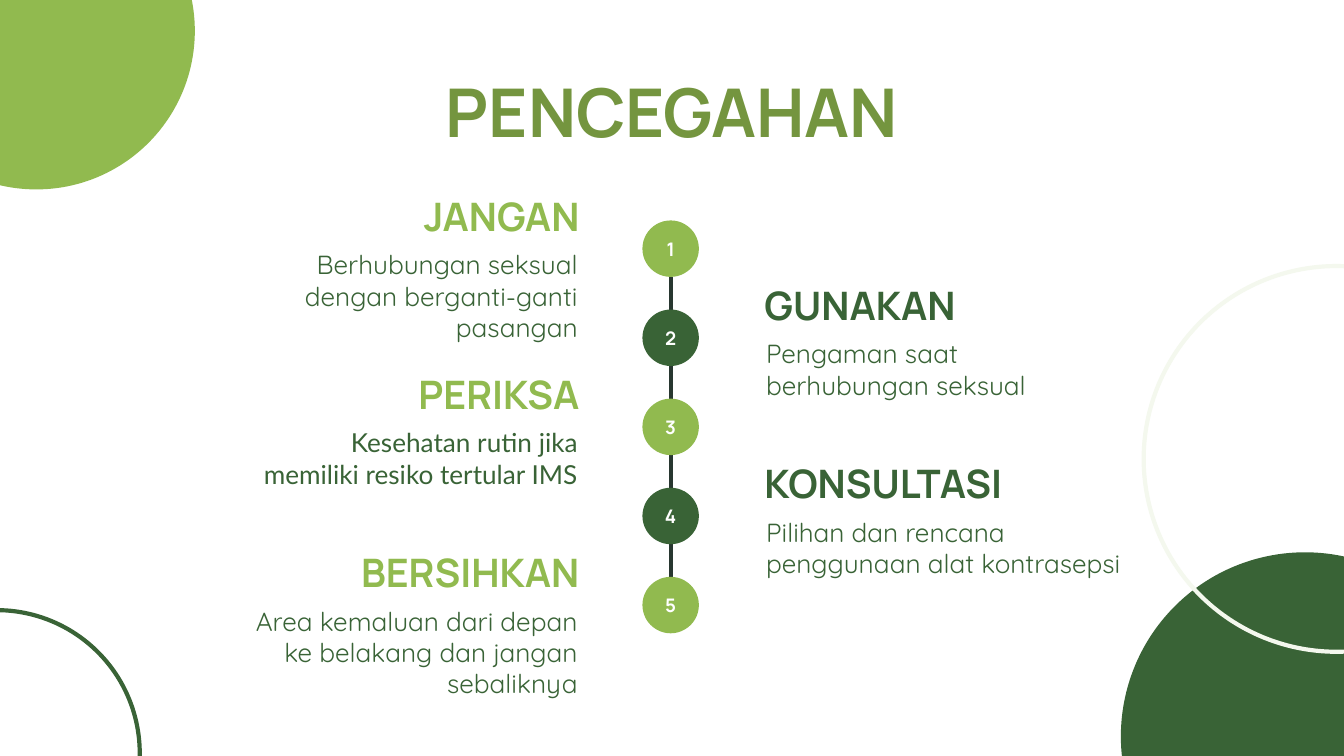
import pptx
import pptx.util
import pptx.oxml.ns
import pptx.dml.color
import pptx.enum.shapes
import pptx.enum.text
import lxml.etree

COLOURS = {"white": "FFFFFF", "lime": "91BA4F", "forest": "396336",
           "olive": "74953F", "mist": "F4F8EE", "ink": "283730"}
COLUMNS, ROWS = 100, 56.25
NODE_SIZE, NODE_LEFT, FIRST_NODE, NODE_STEP = 4.2, 47.8, 16.4, 6.63
AXIS = 49.9
LEFT_EDGE, RIGHT_EDGE = 43.8, 56.2
HEADING_WIDTH = 27.4

STEPS = [
    ("JANGAN", "Berhubungan seksual dengan berganti-ganti pasangan", 27.4, "Quicksand"),
    ("GUNAKAN", "Pengaman saat berhubungan seksual", 24.9, "Quicksand"),
    ("PERIKSA", "Kesehatan rutin jika memiliki resiko tertular IMS", 25.4, "Lato"),
    ("KONSULTASI", "Pilihan dan rencana penggunaan alat kontrasepsi", 28.1, "Quicksand"),
    ("BERSIHKAN", "Area kemaluan dari depan ke belakang dan jangan sebaliknya", 27.4, "Quicksand"),
]
CIRCLES = [
    (83.4, 41.1, 27.4, "forest", None),
    (-9.1, -9.5, 23.6, "lime", None),
    (-10.9, 45.4, 21.3, None, "forest"),
    (85.1, 19.8, 28.7, None, "mist"),
]


class Page:
    ALIGN = {"left": pptx.enum.text.PP_ALIGN.LEFT,
             "center": pptx.enum.text.PP_ALIGN.CENTER,
             "right": pptx.enum.text.PP_ALIGN.RIGHT}
    LINE_WIDTH = pptx.util.Pt(2.25)

    def __init__(self, deck):
        self.unit = deck.slide_width / COLUMNS
        self.slide = deck.slides.add_slide(deck.slide_layouts[5])
        background = self.slide.background.fill
        background.solid()
        background.fore_color.rgb = self.colour("white")

    def colour(self, name):
        return pptx.dml.color.RGBColor.from_string(COLOURS[name])

    def grid(self, *places):
        return [round(place * self.unit) for place in places]

    def set_text(self, shape, text, size, font, colour, align, bold=False,
                 inset=(0.1, 0.1), anchor=pptx.enum.text.MSO_ANCHOR.TOP):
        frame = shape.text_frame
        side, end = (pptx.util.Inches(value) for value in inset)
        layout = {"word_wrap": True, "vertical_anchor": anchor,
                  "auto_size": pptx.enum.text.MSO_AUTO_SIZE.NONE,
                  "margin_left": side, "margin_right": side,
                  "margin_top": end, "margin_bottom": end}
        for name, value in layout.items():
            setattr(frame, name, value)
        para = frame.paragraphs[0]
        para.alignment = self.ALIGN[align]
        span = para.add_run()
        span.text = text
        style = {"size": pptx.util.Pt(size), "name": font, "bold": bold}
        for name, value in style.items():
            setattr(span.font, name, value)
        span.font.color.rgb = self.colour(colour)

    def title(self, text, left, top, width, height):
        box = self.slide.shapes.title
        places = self.grid(left, top, width, height)
        for name, value in zip(("left", "top", "width", "height"), places):
            setattr(box, name, value)
        self.set_text(box, text, 36, "Manrope", "olive", "center", bold=True)

    def text(self, text, left, top, width, height, **style):
        box = self.slide.shapes.add_textbox(*self.grid(left, top, width, height))
        self.set_text(box, text, **style)

    def circle(self, left, top, size, fill=None, line=None):
        shape = self.slide.shapes.add_shape(
            pptx.enum.shapes.MSO_SHAPE.OVAL, *self.grid(left, top, size, size))
        shape.shadow.inherit = False
        if fill:
            shape.fill.solid()
            shape.fill.fore_color.rgb = self.colour(fill)
        else:
            shape.fill.background()
        if line:
            shape.line.color.rgb = self.colour(line)
            shape.line.width = self.LINE_WIDTH
        else:
            shape.line.fill.background()
        return shape

    def node(self, number, top, fill):
        shape = self.circle(NODE_LEFT, top, NODE_SIZE, fill)
        self.set_text(shape, str(number), 10, "Manrope", "white", "center", bold=True,
                      anchor=pptx.enum.text.MSO_ANCHOR.MIDDLE)

    def line(self, *ends):
        line = self.slide.shapes.add_connector(
            pptx.enum.shapes.MSO_CONNECTOR.STRAIGHT, *self.grid(*ends))
        line.line.color.rgb = self.colour("ink")
        line.line.width = self.LINE_WIDTH
        properties = line._element.find(pptx.oxml.ns.qn("p:spPr"))
        lxml.etree.SubElement(properties, pptx.oxml.ns.qn("a:effectLst"))

    def step(self, index, heading, detail, width, font):
        on_left = index % 2 == 0
        top = FIRST_NODE + index * NODE_STEP
        accent = "lime" if on_left else "forest"
        align = "right" if on_left else "left"
        heading_left = LEFT_EDGE + 0.3 - HEADING_WIDTH if on_left else RIGHT_EDGE - 0.3
        detail_left = LEFT_EDGE - width if on_left else RIGHT_EDGE
        self.text(detail, detail_left, top + 1.7, width, 5.7, size=14, font=font,
                  colour="forest", align=align, inset=(0.08, 0.04))
        self.text(heading, heading_left, top - 3.1, HEADING_WIDTH, 4.6, size=21,
                  font="Manrope", colour=accent, align=align, bold=True)
        self.node(index + 1, top, accent)


def main():
    deck = pptx.Presentation()
    deck.slide_width = pptx.util.Inches(COLUMNS / 10)
    deck.slide_height = pptx.util.Inches(ROWS / 10)
    page = Page(deck)
    for circle in CIRCLES:
        page.circle(*circle)
    page.title("PENCEGAHAN", 3.4, 4.2, 93.2, 6.3)
    page.line(AXIS, FIRST_NODE + NODE_SIZE,
              AXIS, FIRST_NODE + (len(STEPS) - 1) * NODE_STEP)
    for index, step in enumerate(STEPS):
        page.step(index, *step)
    deck.save("out.pptx")


if __name__ == "__main__":
    main()
